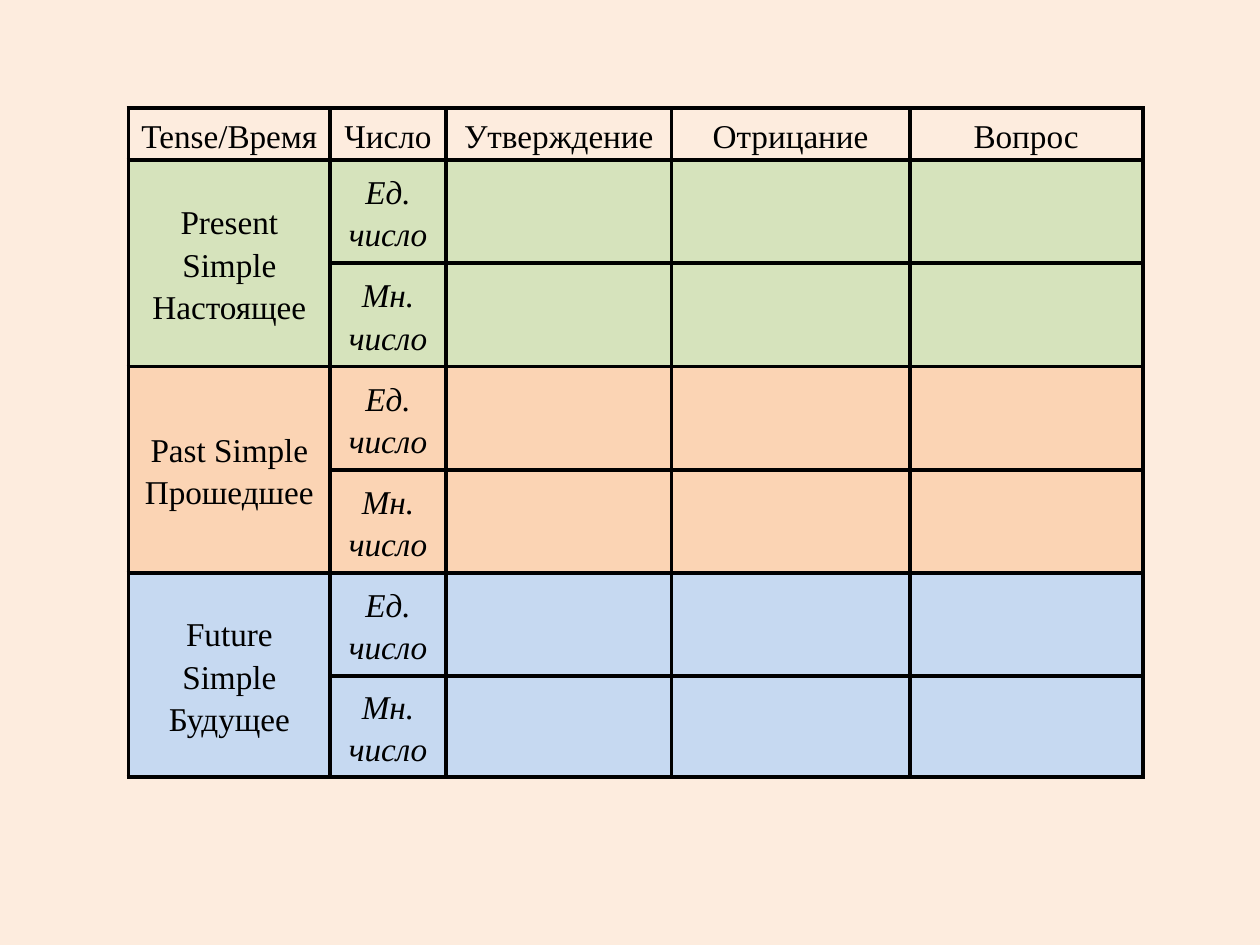
from dataclasses import dataclass

import lxml.etree
import pptx
import pptx.dml.color
import pptx.enum.text
import pptx.oxml.ns
import pptx.table
import pptx.util

FONT = "Times New Roman"
TEXT_SIZE = 19
BORDER_WIDTH = 2.5
INK = "000000"
PAGE_COLOUR = "FDECDE"  # FAC090 at 30 % over white
SLIDE_WIDTH, SLIDE_HEIGHT = 10, 7.5
TABLE_LEFT, TABLE_TOP = 1.02, 0.86
COLUMN_WIDTHS = [1.6, 0.92, 1.79, 1.89, 1.85]
ROW_HEIGHTS = [0.41] + [0.82] * 5 + [0.8]
HEADINGS = ["Tense/Время", "Число", "Утверждение", "Отрицание", "Вопрос"]
NUMBERS = ["Ед. число", "Мн. число"]


@dataclass
class Tense:
    english: str
    russian: str
    colour: str


TENSES = [
    Tense("Present Simple", "Настоящее", "D6E3BC"),
    Tense("Past Simple", "Прошедшее", "FBD4B4"),
    Tense("Future Simple", "Будущее", "C6D9F1"),
]


def rgb(colour: str) -> pptx.dml.color.RGBColor:
    return pptx.dml.color.RGBColor.from_string(colour)


def add_borders(cell: pptx.table._Cell) -> None:
    """Draw all four sides; call before filling, as lines precede the fill in XML."""
    properties = cell._tc.get_or_add_tcPr()
    qualified = pptx.oxml.ns.qn
    for side in ("lnL", "lnR", "lnT", "lnB"):
        line = lxml.etree.SubElement(properties, qualified(f"a:{side}"))
        line.set("w", str(pptx.util.Pt(BORDER_WIDTH)))
        fill = lxml.etree.SubElement(line, qualified("a:solidFill"))
        lxml.etree.SubElement(fill, qualified("a:srgbClr")).set("val", INK)


def write_cell(cell: pptx.table._Cell, lines: list[str], italic: bool = False) -> None:
    cell.vertical_anchor = pptx.enum.text.MSO_ANCHOR.MIDDLE
    cell.margin_left = cell.margin_right = pptx.util.Inches(0.07)
    cell.margin_top = cell.margin_bottom = 0
    frame = cell.text_frame
    for index, line in enumerate(lines):
        para = frame.add_paragraph() if index else frame.paragraphs[0]
        para.alignment = pptx.enum.text.PP_ALIGN.CENTER
        para.line_spacing = 1.15
        span = para.add_run()
        span.text = line
        span.font.name = FONT
        span.font.size = pptx.util.Pt(TEXT_SIZE)
        span.font.bold = False
        span.font.italic = italic
        span.font.color.rgb = rgb(INK)


def add_grid(page: pptx.slide.Slide) -> pptx.table.Table:
    """Add the empty bordered table with its column and row sizes."""
    inches = pptx.util.Inches
    grid = page.shapes.add_table(
        len(ROW_HEIGHTS), len(COLUMN_WIDTHS), inches(TABLE_LEFT), inches(TABLE_TOP),
        inches(sum(COLUMN_WIDTHS)), inches(sum(ROW_HEIGHTS)),
    ).table
    grid.first_row = grid.horz_banding = False
    for column, width in zip(grid.columns, COLUMN_WIDTHS):
        column.width = inches(width)
    for row, height in zip(grid.rows, ROW_HEIGHTS):
        row.height = inches(height)
    for cell in grid.iter_cells():
        add_borders(cell)
        cell.fill.background()
    return grid


def add_tense(grid: pptx.table.Table, top_row: int, tense: Tense) -> None:
    for offset, number in enumerate(NUMBERS):
        row = top_row + offset
        for column in range(len(COLUMN_WIDTHS)):
            fill = grid.cell(row, column).fill
            fill.solid()
            fill.fore_color.rgb = rgb(tense.colour)
        write_cell(grid.cell(row, 1), [number], italic=True)
    name_cell = grid.cell(top_row, 0)
    name_cell.merge(grid.cell(top_row + len(NUMBERS) - 1, 0))
    write_cell(name_cell, [tense.english, tense.russian])


def main() -> None:
    deck = pptx.Presentation()
    deck.slide_width = pptx.util.Inches(SLIDE_WIDTH)
    deck.slide_height = pptx.util.Inches(SLIDE_HEIGHT)
    page = deck.slides.add_slide(deck.slide_layouts[6])
    page.background.fill.solid()
    page.background.fill.fore_color.rgb = rgb(PAGE_COLOUR)

    grid = add_grid(page)
    for column, heading in enumerate(HEADINGS):
        write_cell(grid.cell(0, column), [heading])
    for index, tense in enumerate(TENSES):
        add_tense(grid, 1 + index * len(NUMBERS), tense)
    deck.save("out.pptx")


if __name__ == "__main__":
    main()
